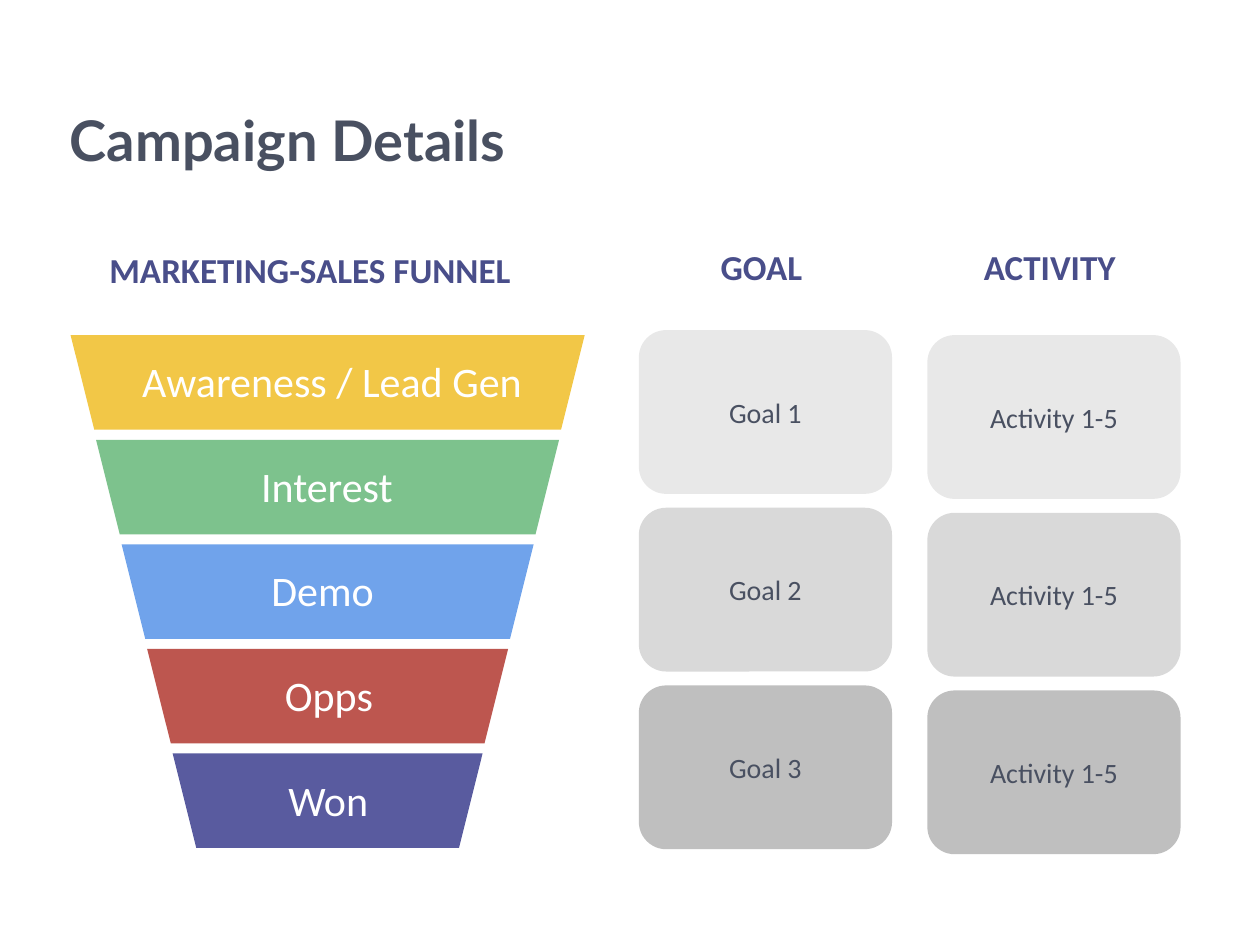
from pptx import Presentation
from pptx.dml.color import RGBColor
from pptx.enum.shapes import MSO_SHAPE
from pptx.enum.text import MSO_ANCHOR, PP_ALIGN
from pptx.util import Inches, Pt

TRAPEZOID = MSO_SHAPE.TRAPEZOID
ROUNDED = MSO_SHAPE.ROUNDED_RECTANGLE
LEFT, CENTER = PP_ALIGN.LEFT, PP_ALIGN.CENTER
TOP, MIDDLE = MSO_ANCHOR.TOP, MSO_ANCHOR.MIDDLE
TITLE_ONLY = 5

COLORS = {
    "slate": "495061", "indigo": "494E8A", "white": "FFFFFF",
    "yellow": "F2C747", "green": "7DC28D", "blue": "70A3EB",
    "red": "BD564F", "violet": "595B9F",
    "light": "E8E8E8", "medium": "D9D9D9", "dark": "BFBFBF",
}

# Funnel: stage name, fill, left and width of its label
STAGES = [
    ("Awareness / Lead Gen", "yellow", 0.8, 3.67),
    ("Interest", "green", 0.98, 3.23),
    ("Demo", "blue", 1.1, 2.92),
    ("Opps", "red", 1.32, 2.58),
    ("Won", "violet", 1.56, 2.09),
]
FUNNEL_AXIS, FUNNEL_TOP = 2.6, 2.66
TOP_WIDTH, BOTTOM_WIDTH = 4.08, 2.46
BAND_HEIGHT, BAND_STEP = 0.75, 0.83
LABEL_DROP, LABEL_HEIGHT = 0.16, 0.47

# Column headings: text, left, top, width
HEADINGS = [
    ("MARKETING-SALES FUNNEL", 0.77, 1.96, 3.77),
    ("GOAL", 5.62, 1.94, 0.89),
    ("ACTIVITY", 7.71, 1.94, 1.31),
]
HEADING_HEIGHT = 0.49

# Card columns: left, top, texts
CARD_COLUMNS = [
    (5.07, 2.62, ["Goal 1", "Goal 2", "Goal 3"]),
    (7.36, 2.66, ["Activity 1-5"] * 3),
]
CARD_FILLS = ["light", "medium", "dark"]
CARD_WIDTH, CARD_HEIGHT, CARD_STEP = 2.01, 1.3, 1.41


def color(name):
    return RGBColor.from_string(COLORS[name])


def write(shape, text, size, tone, font="Calibri", bold=False,
          align=CENTER, anchor=MIDDLE, spacing=None):
    frame = shape.text_frame
    frame.word_wrap = True
    frame.vertical_anchor = anchor
    para = frame.paragraphs[0]
    para.alignment = align
    para.line_spacing = spacing
    span = para.add_run()
    span.text = text
    span.font.name = font
    span.font.size = Pt(size)
    span.font.bold = bold
    span.font.color.rgb = color(tone)


def add_filled_shape(page, kind, left, top, width, height, fill):
    shape = page.shapes.add_shape(
        kind, Inches(left), Inches(top), Inches(width), Inches(height))
    shape.shadow.inherit = False
    shape.fill.solid()
    shape.fill.fore_color.rgb = color(fill)
    shape.line.fill.background()
    return shape


def add_text(page, text, left, top, width, height, size, tone, **style):
    box = page.shapes.add_textbox(
        Inches(left), Inches(top), Inches(width), Inches(height))
    write(box, text, size, tone, anchor=TOP, spacing=0.9, **style)


def add_title(page, text):
    title = page.shapes.title
    title.left, title.top = Inches(0), Inches(0.76)
    title.width, title.height = Inches(4.57), Inches(0.69)
    write(title, text, 32, "slate", font="Lato", bold=True)


def add_funnel(page):
    taper = (TOP_WIDTH - BOTTOM_WIDTH) / (len(STAGES) - 1)
    for row, (name, fill, label_left, label_width) in enumerate(STAGES):
        width = TOP_WIDTH - row * taper
        top = FUNNEL_TOP + row * BAND_STEP
        band = add_filled_shape(page, TRAPEZOID, FUNNEL_AXIS - width / 2, top,
                                width, BAND_HEIGHT, fill)
        band.rotation = 180
        # The label is a box of its own, so that it stays upright
        add_text(page, name, label_left, top + LABEL_DROP,
                 label_width, LABEL_HEIGHT, 24, "white")


def add_cards(page, left, top, texts):
    for row, (text, fill) in enumerate(zip(texts, CARD_FILLS)):
        card = add_filled_shape(page, ROUNDED, left, top + row * CARD_STEP,
                                CARD_WIDTH, CARD_HEIGHT, fill)
        write(card, text, 16, "slate")


def main():
    deck = Presentation()
    deck.slide_width, deck.slide_height = Inches(10), Inches(7.5)
    page = deck.slides.add_slide(deck.slide_layouts[TITLE_ONLY])

    add_title(page, "Campaign Details")
    for text, left, top, width in HEADINGS:
        add_text(page, text, left, top, width, HEADING_HEIGHT, 20, "indigo",
                 bold=True, align=LEFT)
    add_funnel(page)
    for left, top, texts in CARD_COLUMNS:
        add_cards(page, left, top, texts)

    deck.save("out.pptx")


if __name__ == "__main__":
    main()
